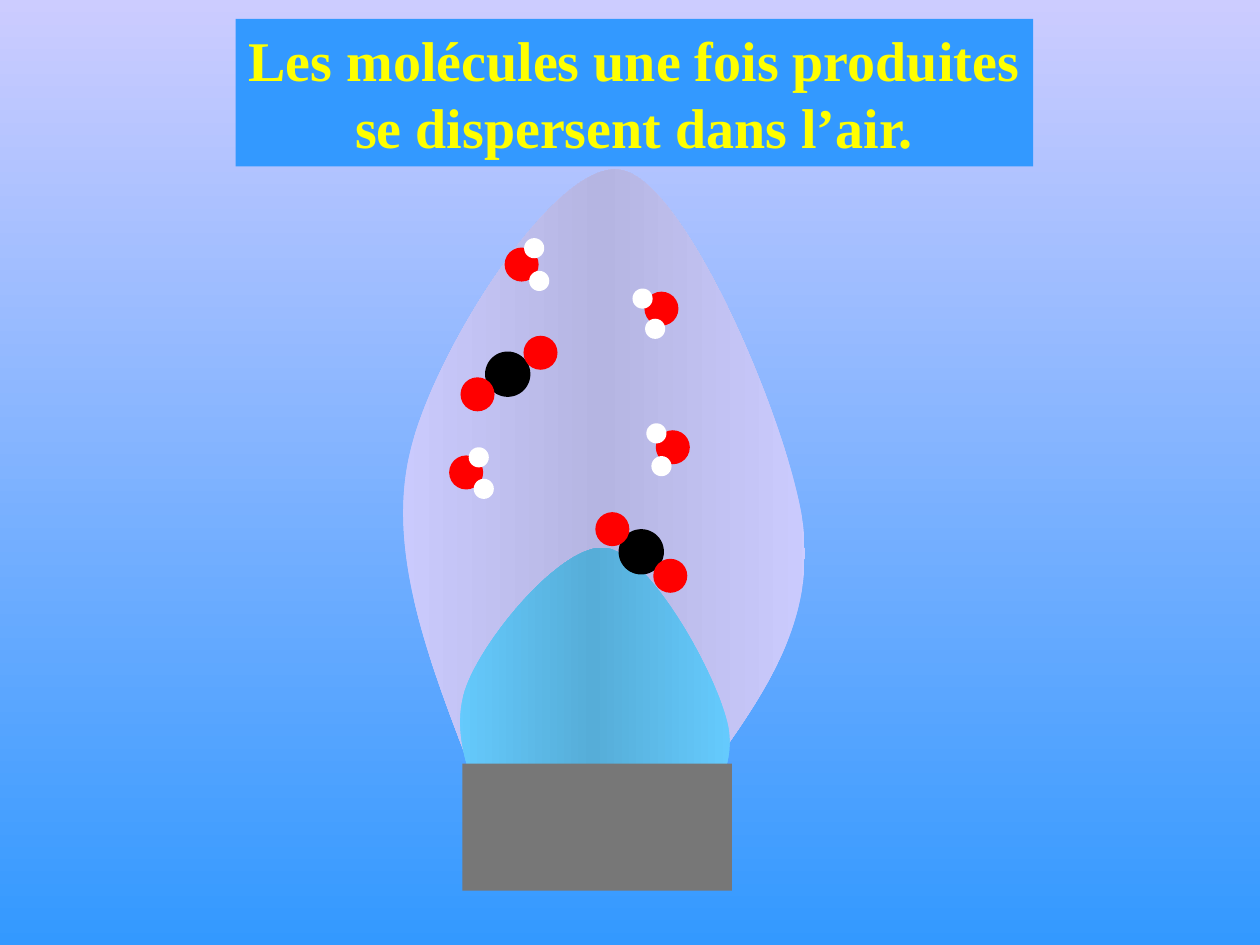
from copy import deepcopy

from lxml import etree
from pptx import Presentation
from pptx.dml.color import RGBColor
from pptx.enum.shapes import MSO_SHAPE
from pptx.enum.text import MSO_ANCHOR, MSO_AUTO_SIZE, PP_ALIGN
from pptx.oxml.ns import qn
from pptx.util import Inches, Pt

RECT, OVAL = MSO_SHAPE.RECTANGLE, MSO_SHAPE.OVAL
CENTER, MIDDLE = PP_ALIGN.CENTER, MSO_ANCHOR.MIDDLE
GROW = MSO_AUTO_SIZE.SHAPE_TO_FIT_TEXT

FONT = "Times New Roman"
COLORS = {
    "lavender": "CCCCFF", "cyan": "66CCFF", "blue": "3399FF",
    "yellow": "FFFF00", "burner": "777777",
    "carbon": "000000", "oxygen": "FF0000", "hydrogen": "FFFFFF",
}
DIAMETERS = {"carbon": 0.36, "oxygen": 0.27, "hydrogen": 0.16}

# Start point, then two control points and an end point for each curve
OUTER_FLAME = [
    (3.73, 6.09),
    (3.4, 5.23), (3.06, 4.36), (3.26, 3.57),
    (3.45, 2.78), (4.42, 1.25), (4.93, 1.35),
    (5.44, 1.44), (6.25, 3.34), (6.37, 4.14),
    (6.48, 4.93), (6.06, 5.51), (5.65, 6.09),
]
INNER_FLAME = [
    (4.01, 6.77),
    (3.79, 6.33), (3.56, 5.89), (3.69, 5.48),
    (3.82, 5.08), (4.47, 4.3), (4.81, 4.35),
    (5.16, 4.4), (5.7, 5.37), (5.78, 5.77),
    (5.85, 6.17), (5.57, 6.47), (5.29, 6.77),
]

# Central atom and outer atoms, centre, offsets of the outer atoms
CO2, WATER = ("carbon", "oxygen"), ("oxygen", "hydrogen")
MOLECULES = [
    (CO2, (5.09, 4.38), [(-0.23, -0.18), (0.23, 0.19)]),
    (WATER, (5.34, 3.55), [(-0.13, -0.11), (-0.09, 0.15)]),
    (WATER, (3.7, 3.75), [(0.14, 0.13), (0.1, -0.12)]),
    (CO2, (4.03, 2.97), [(-0.24, 0.16), (0.26, -0.17)]),
    (WATER, (5.25, 2.45), [(-0.15, -0.08), (-0.05, 0.16)]),
    (WATER, (4.14, 2.1), [(0.14, 0.13), (0.1, -0.13)]),
]


def rgb(name):
    return RGBColor.from_string(COLORS[name])


def bend(sp):
    """Turn each three line segments of the outline into one curve."""
    lines = sp.element.findall(".//" + qn("a:lnTo"))
    for first, second, third in zip(*[iter(lines)] * 3):
        curve = etree.Element(qn("a:cubicBezTo"))
        first.addprevious(curve)
        for line in (first, second, third):
            curve.append(line[0])
            line.getparent().remove(line)


class SlideBuilder:
    def __init__(self, slide):
        self.slide = slide

    def gradient(self, fill, element, names, angle=0):
        """Spread the named colours evenly over the fill."""
        fill.gradient()
        stops = element.find(".//" + qn("a:gsLst"))
        for _ in names[2:]:
            stops.append(deepcopy(stops[-1]))
        for i, (stop, name) in enumerate(zip(fill.gradient_stops, names)):
            stop.position = i / (len(names) - 1)
            stop.color.rgb = rgb(name)
        fill.gradient_angle = angle
        return stops

    def background(self, top, bottom):
        self.gradient(self.slide.background.fill, self.slide.element,
                      [top, bottom], 270)

    def title(self, text, left, top, width, height):
        sp = self.slide.shapes.title
        sp.element.getparent().append(sp.element)
        sp.left, sp.top = Inches(left), Inches(top)
        sp.width, sp.height = Inches(width), Inches(height)
        sp.fill.solid()
        sp.fill.fore_color.rgb = rgb("blue")
        tf = sp.text_frame
        tf.text = text
        tf.word_wrap = False
        tf.auto_size = GROW
        tf.vertical_anchor = MIDDLE
        for p in tf.paragraphs:
            p.alignment = CENTER
            for r in p.runs:
                r.font.name, r.font.size, r.font.bold = FONT, Pt(32), True
                r.font.color.rgb = rgb("yellow")

    def flame(self, parent, points, color, shade):
        """Draw a curved flame whose middle is shaded to a percentage."""
        start, *rest = [(Inches(x), Inches(y)) for x, y in points]
        builder = parent.shapes.build_freeform(*start)
        builder.add_line_segments(rest, close=False)
        sp = builder.convert_to_shape()
        bend(sp)
        sp.shadow.inherit = False
        sp.line.fill.background()
        stops = self.gradient(sp.fill, sp.element, [color] * 3)
        etree.SubElement(stops[1][0], qn("a:shade"), val=str(round(shade * 1000)))

    def group(self):
        return self.slide.shapes.add_group_shape()

    def shape(self, parent, kind, color, left, top, width, height):
        sp = parent.shapes.add_shape(
            kind, Inches(left), Inches(top), Inches(width), Inches(height))
        sp.shadow.inherit = False
        sp.fill.solid()
        sp.fill.fore_color.rgb = rgb(color)
        sp.line.fill.background()

    def atom(self, parent, element, x, y):
        d = DIAMETERS[element]
        self.shape(parent, OVAL, element, x - d / 2, y - d / 2, d, d)

    def molecule(self, elements, center, offsets):
        core, outer = elements
        x, y = center
        group = self.group()
        self.atom(group, core, x, y)
        for dx, dy in offsets:
            self.atom(group, outer, x + dx, y + dy)


def main():
    prs = Presentation()
    prs.slide_width, prs.slide_height = Inches(10), Inches(7.5)
    s = SlideBuilder(prs.slides.add_slide(prs.slide_layouts[5]))
    s.background("lavender", "blue")
    burner = s.group()
    s.flame(burner, OUTER_FLAME, "lavender", 76.47)
    s.flame(burner, INNER_FLAME, "cyan", 68.63)
    s.shape(burner, RECT, "burner", 3.67, 6.06, 2.14, 1.01)
    for molecule in MOLECULES:
        s.molecule(*molecule)
    s.title("Les molécules une fois produites\nse dispersent dans l’air.",
            1.87, 0.15, 6.33, 1.17)
    prs.save("out.pptx")


if __name__ == "__main__":
    main()
